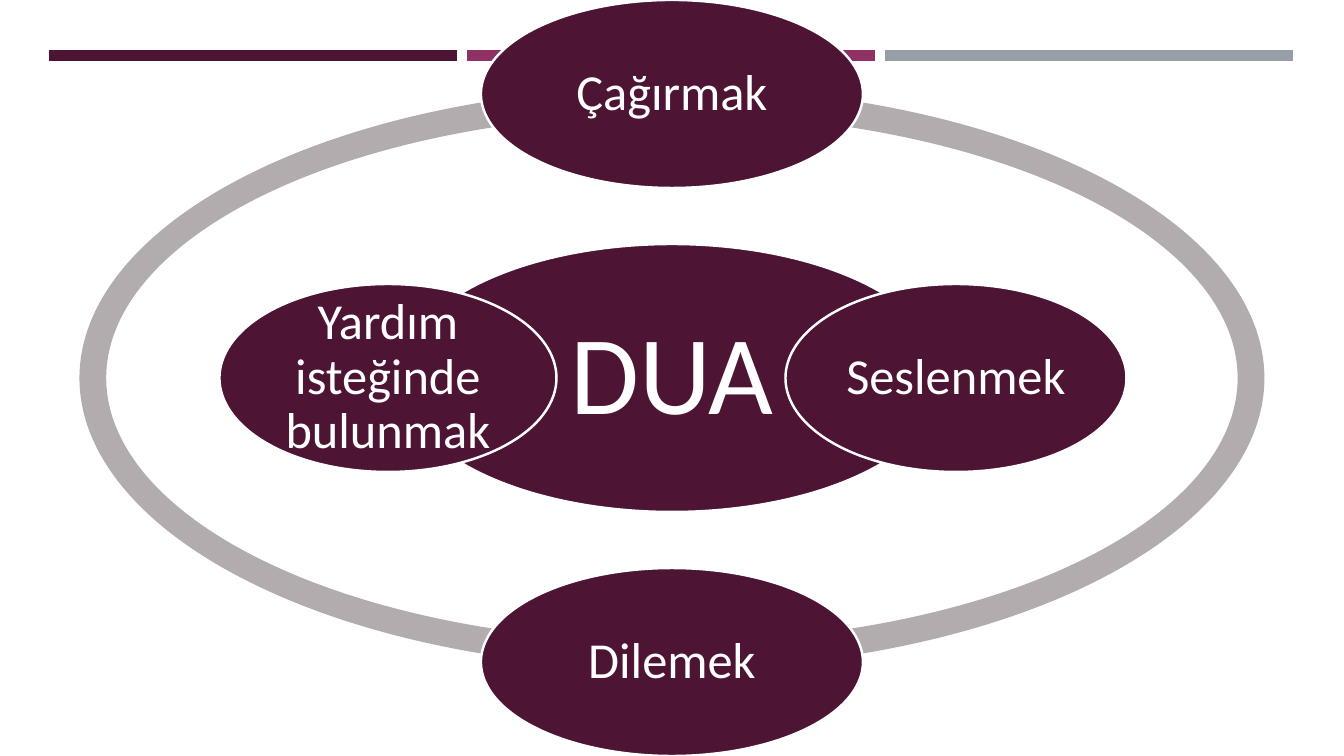
import pptx
import pptx.util
import pptx.dml.color
import pptx.enum.shapes
import pptx.enum.text

PX = 914400 / 100.8
SLIDE_SIZE = (1344, 756)
CENTRE = (672, 378)
FONT = "Calibri"
PLUM, GREY, WHITE = "4D1434", "B2ACAE", "FFFFFF"

BAR_COLOURS = [PLUM, "903163", "969FA7"]
BAR_LEFT, BAR_TOP, BAR_PITCH = 49, 50, 418
BAR_SIZE = (408, 11)

RING_SIZE = (1185, 582)
RING_ANGLES = [108, 54, 0, 162]
RING_SWEEP, RING_TURN, RING_THICKNESS = 54, 216, 0.046

ORBIT = 284
HUB = ("DUA", (0, 0), (545, 268), 80, 11)
SATELLITES = [
    ("Çağırmak", (0, -1), 382),
    ("Seslenmek", (1, 0), 341),
    ("Dilemek", (0, 1), 382),
    ("Yardım isteğinde bulunmak", (-1, 0), 337),
]
SATELLITE_HEIGHT = 188

SHAPES = pptx.enum.shapes.MSO_SHAPE


def px(length):
    return pptx.util.Emu(round(length * PX))


def colour(hex_string):
    return pptx.dml.color.RGBColor.from_string(hex_string)


def add_filled(slide, preset, left, top, size, fill):
    shape = slide.shapes.add_shape(preset, px(left), px(top), px(size[0]), px(size[1]))
    shape.shadow.inherit = False
    shape.fill.solid()
    shape.fill.fore_color.rgb = colour(fill)
    shape.line.fill.background()
    return shape


def add_centred(slide, preset, direction, size, fill):
    left, top = (
        middle + step * ORBIT - length / 2
        for middle, step, length in zip(CENTRE, direction, size)
    )
    return add_filled(slide, preset, left, top, size, fill)


def add_oval(slide, label, direction, size, points, inset):
    oval = add_centred(slide, SHAPES.OVAL, direction, size, PLUM)
    oval.line.color.rgb = colour(WHITE)
    oval.line.width = pptx.util.Pt(1.75)
    frame = oval.text_frame
    frame.word_wrap = True
    frame.vertical_anchor = pptx.enum.text.MSO_ANCHOR.MIDDLE
    frame.margin_left = frame.margin_right = px(inset)
    frame.margin_top = frame.margin_bottom = px(inset)
    paragraph = frame.paragraphs[0]
    paragraph.text = label
    paragraph.alignment = pptx.enum.text.PP_ALIGN.CENTER
    paragraph.line_spacing = 0.9
    paragraph.font.name = FONT
    paragraph.font.size = pptx.util.Pt(points)
    paragraph.font.color.rgb = colour(WHITE)


def main():
    deck = pptx.Presentation()
    deck.slide_width, deck.slide_height = map(px, SLIDE_SIZE)
    slide = deck.slides.add_slide(deck.slide_layouts[6])

    for index, bar_colour in enumerate(BAR_COLOURS):
        left = BAR_LEFT + index * BAR_PITCH
        add_filled(slide, SHAPES.RECTANGLE, left, BAR_TOP, BAR_SIZE, bar_colour)

    for start in RING_ANGLES:
        arc = add_centred(slide, SHAPES.BLOCK_ARC, (0, 0), RING_SIZE, GREY)
        arc.adjustments[0] = start
        arc.adjustments[1] = (start + RING_SWEEP) % RING_TURN
        arc.adjustments[2] = RING_THICKNESS

    add_oval(slide, *HUB)
    for label, direction, width in SATELLITES:
        add_oval(slide, label, direction, (width, SATELLITE_HEIGHT), 36, 5)

    deck.save("out.pptx")


if __name__ == "__main__":
    main()
